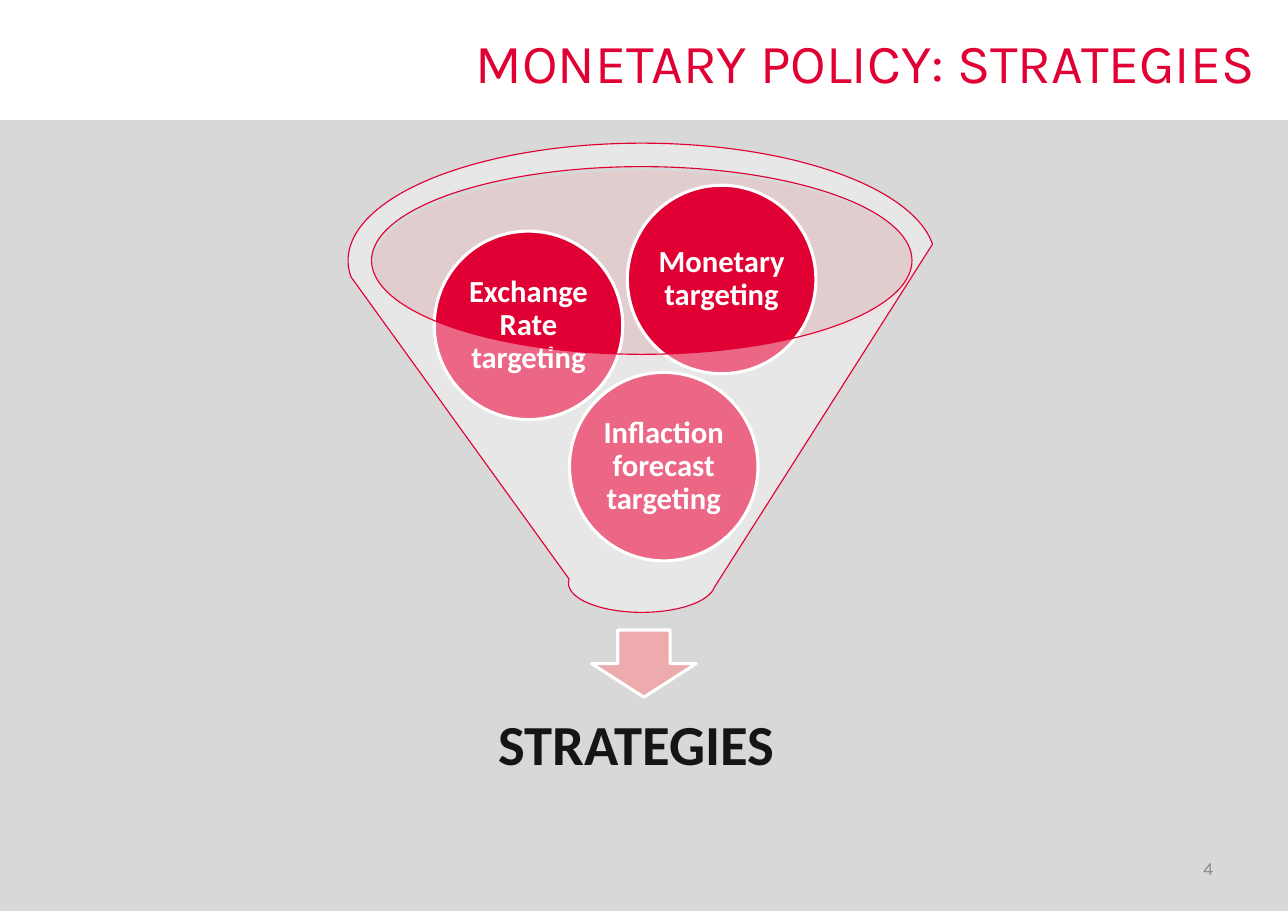
from lxml.etree import SubElement
from pptx import Presentation
from pptx.dml.color import RGBColor
from pptx.enum.shapes import MSO_SHAPE
from pptx.enum.text import MSO_ANCHOR, PP_ALIGN
from pptx.oxml.ns import qn
from pptx.util import Pt

RED = "E00034"
WHITE = "FFFFFF"


def color(hex_string):
    return RGBColor.from_string(hex_string)


class FunnelSlide:
    """Holds the slide and its style, and draws each kind of element."""

    heading_font = "Karla"
    body_font = "Calibri"

    def __init__(self, slide):
        self.slide = slide

    def shape(self, kind, box, fill, line=None, line_width=2, opacity=None):
        shape = self.slide.shapes.add_shape(kind, *map(Pt, box))
        shape.shadow.inherit = False
        shape.fill.solid()
        shape.fill.fore_color.rgb = color(fill)
        if opacity is not None:
            fill_color = shape._element.spPr.find(qn("a:solidFill"))[0]
            SubElement(fill_color, qn("a:alpha"), val=str(opacity * 1000))
        if line:
            shape.line.color.rgb = color(line)
            shape.line.width = Pt(line_width)
        else:
            shape.line.fill.background()
        return shape

    def label(self, shape, text, size, font, text_color, alignment, bold=False, spacing=None):
        frame = shape.text_frame
        frame.word_wrap = True
        frame.vertical_anchor = MSO_ANCHOR.MIDDLE
        paragraph = frame.paragraphs[0]
        paragraph.alignment = alignment
        paragraph.line_spacing = spacing
        run = paragraph.add_run()
        run.text = text
        run.font.size = Pt(size)
        run.font.name = font
        run.font.bold = bold
        run.font.color.rgb = color(text_color)

    def heading(self, box, text, size, text_color):
        textbox = self.slide.shapes.add_textbox(*map(Pt, box))
        self.label(textbox, text, size, self.heading_font, text_color, PP_ALIGN.RIGHT)

    def result(self, box, text):
        textbox = self.slide.shapes.add_textbox(*map(Pt, box))
        self.label(textbox, text, 37, self.body_font, "151515", PP_ALIGN.CENTER, True, 0.9)

    def ball(self, left, top, text):
        diameter = 123.2
        ball = self.shape(MSO_SHAPE.OVAL, (left, top, diameter, diameter), RED, WHITE)
        frame = ball.text_frame
        frame.margin_left = frame.margin_right = Pt(2)
        frame.margin_top = frame.margin_bottom = Pt(2)
        self.label(ball, text, 20, self.body_font, WHITE, PP_ALIGN.CENTER, True, 0.9)


def main():
    presentation = Presentation()
    presentation.slide_width = Pt(841.68)
    presentation.slide_height = Pt(595.44)
    funnel = FunnelSlide(presentation.slides.add_slide(presentation.slide_layouts[6]))

    funnel.shape(MSO_SHAPE.RECTANGLE, (0, 78.5, 841.68, 516.94), "D8D8D8")
    funnel.heading((216, 14.4, 611.3, 51.8), "MONETARY POLICY: STRATEGIES", 36, RED)

    funnel.shape(MSO_SHAPE.OVAL, (244, 111.6, 353.5, 122.4), "F0BDBF", opacity=40)
    funnel.shape(MSO_SHAPE.DOWN_ARROW, (386.6, 411.8, 68.4, 43.9), "EDABAE", WHITE)
    funnel.result((251.3, 447.1, 329, 82.1), "STRATEGIES")
    for left, top, text in (
        (372.2, 243.4, "Inflaction forecast targeting"),
        (283.8, 151.1, "Exchange Rate targeting"),
        (410, 121.1, "Monetary targeting"),
    ):
        funnel.ball(left, top, text)
    funnel.shape(MSO_SHAPE.FUNNEL, (227.5, 93.6, 383.8, 306.7), WHITE, RED, 0.75, 40)

    funnel.heading((603.4, 551.5, 196.6, 31.7), "4", 12, "8C8C8C")
    presentation.save("out.pptx")


if __name__ == "__main__":
    main()
